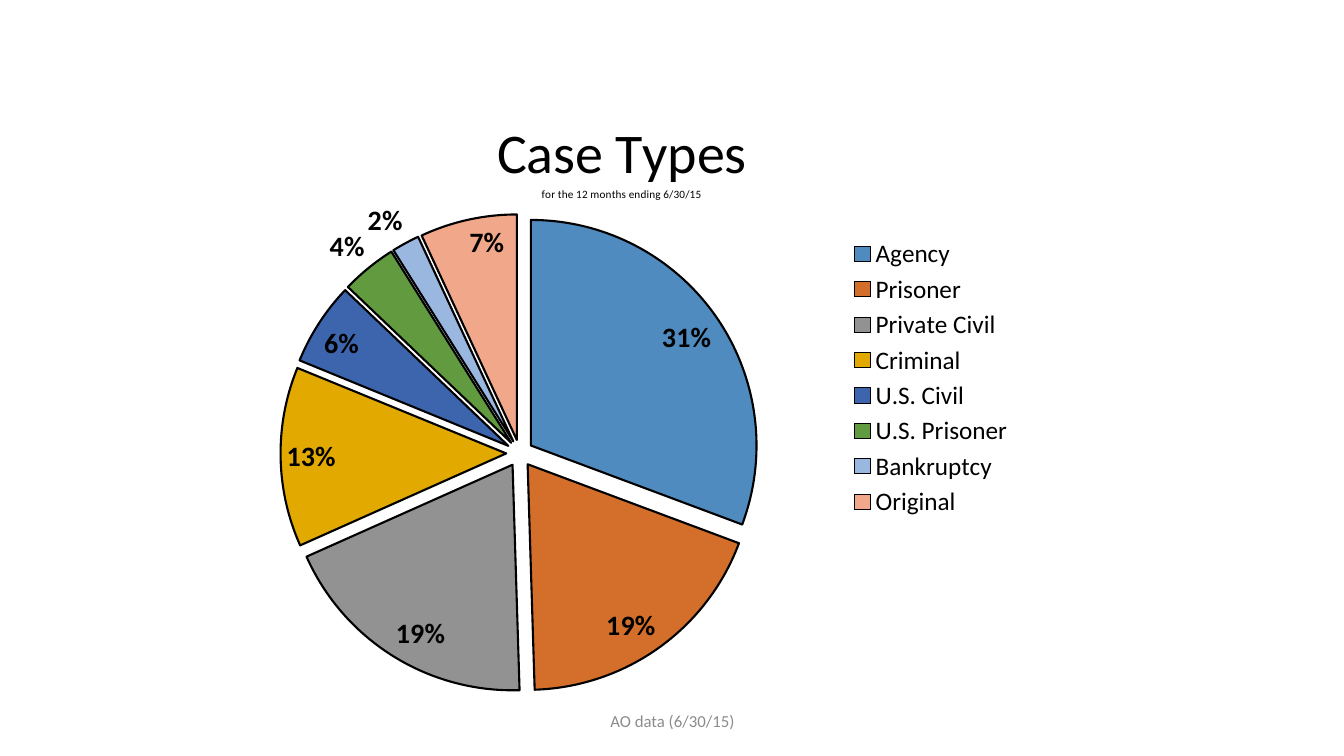
from dataclasses import dataclass

from lxml import etree
from pptx import Presentation
from pptx.chart.data import CategoryChartData
from pptx.dml.color import RGBColor
from pptx.enum.chart import XL_CHART_TYPE, XL_LABEL_POSITION, XL_LEGEND_POSITION
from pptx.enum.text import MSO_ANCHOR, PP_ALIGN
from pptx.oxml.ns import qn
from pptx.util import Inches, Pt

PIE = XL_CHART_TYPE.PIE
INSIDE, OUTSIDE = XL_LABEL_POSITION.INSIDE_END, XL_LABEL_POSITION.OUTSIDE_END
LEGEND_RIGHT = XL_LEGEND_POSITION.RIGHT
CENTER, MIDDLE = PP_ALIGN.CENTER, MSO_ANCHOR.MIDDLE


@dataclass(frozen=True)
class Theme:
    font: str = "Calibri"
    ink: str = "000000"
    muted: str = "8C8C8C"
    title: float = 40
    subtitle: float = 8
    legend: float = 18
    label: float = 20
    footer: float = 12
    outline: float = 1.5
    explosion: int = 6


THEME = Theme()

# Case type, share, slice colour
CASES = [
    ("Agency", 31, "508BBF"),
    ("Prisoner", 19, "D36F2B"),
    ("Private Civil", 19, "929292"),
    ("Criminal", 13, "E2AA00"),
    ("U.S. Civil", 6, "3D65AE"),
    ("U.S. Prisoner", 4, "629A3F"),
    ("Bankruptcy", 2, "9AB7E0"),
    ("Original", 7, "F1A78A"),
]
SMALL_SHARE = 5  # slices below this carry their label outside


def style_font(font, size, color=THEME.ink, bold=False):
    font.name, font.size, font.bold = THEME.font, Pt(size), bold
    font.color.rgb = RGBColor.from_string(color)


def write_text(para, text, **style):
    span = para.add_run()
    span.text = text
    style_font(span.font, **style)


def place_part(part, index, **fractions):
    """Fix a chart part at fractions (x, y, w, h) of the chart box."""
    for old in part.findall(qn("c:layout")):
        part.remove(old)
    layout = etree.Element(qn("c:layout"))
    manual = etree.SubElement(layout, qn("c:manualLayout"))
    if "w" in fractions and index == 0:
        etree.SubElement(manual, qn("c:layoutTarget"), val="inner")
    for axis in "xy":
        etree.SubElement(manual, qn(f"c:{axis}Mode"), val="edge")
    for key, value in fractions.items():
        etree.SubElement(manual, qn(f"c:{key}"), val=str(value))
    part.insert(index, layout)


def style_slices(series):
    series.format.line.width = Pt(THEME.outline)
    explosion = etree.Element(qn("c:explosion"), val=str(THEME.explosion))
    series._element.find(qn("c:spPr")).addnext(explosion)
    for index, (_, _, color) in enumerate(CASES):
        look = series.points[index].format
        look.fill.solid()
        look.fill.fore_color.rgb = RGBColor.from_string(color)
        look.line.color.rgb = RGBColor.from_string(THEME.ink)
        look.line.width = Pt(THEME.outline)


def label_slices(series):
    labels = series.data_labels
    labels.show_percentage, labels.show_value = True, False
    labels.number_format, labels.number_format_is_linked = "0%", False
    labels.position = INSIDE
    style_font(labels.font, THEME.label, bold=True)
    for index, (_, share, _) in enumerate(CASES):
        if share < SMALL_SHARE:
            label = series.points[index].data_label
            style_font(label.font, THEME.label, bold=True)
            label.position = OUTSIDE
    for item in labels._element.findall(qn("c:dLbl")):
        item.find(qn("c:showVal")).set("val", "0")
        item.find(qn("c:showPercent")).set("val", "1")


def add_case_chart(page, left, top, width, height):
    data = CategoryChartData()
    data.categories = [name for name, _, _ in CASES]
    data.add_series("Series 1", [share for _, share, _ in CASES])
    box = [Inches(length) for length in (left, top, width, height)]
    chart = page.shapes.add_chart(PIE, *box, data).chart
    style_font(chart.font, THEME.legend)

    # Title and subtitle
    frame = chart.chart_title.text_frame
    write_text(frame.paragraphs[0], "Case Types", size=THEME.title)
    write_text(frame.add_paragraph(), "for the 12 months ending 6/30/15",
               size=THEME.subtitle)
    place_part(chart.chart_title._element, 1, x=0.38, y=0.1)

    # Slices and labels
    plot = chart.plots[0]
    plot.vary_by_categories = True
    style_slices(plot.series[0])
    label_slices(plot.series[0])
    place_part(chart._chartSpace.chart.plotArea, 0, x=0.13, y=0.25, w=0.56, h=0.73)

    # Legend
    chart.has_legend = True
    chart.legend.position = LEGEND_RIGHT
    chart.legend.include_in_layout = False
    style_font(chart.legend.font, THEME.legend)
    place_part(chart.legend._element, 1, x=0.79, y=0.28, w=0.2, h=0.44)


def add_footer(page, left, top, width, height):
    box = page.shapes.add_textbox(*[Inches(v) for v in (left, top, width, height)])
    frame = box.text_frame
    frame.word_wrap, frame.vertical_anchor = True, MIDDLE
    para = frame.paragraphs[0]
    para.alignment = CENTER
    write_text(para, "AO data (6/30/15)", size=THEME.footer, color=THEME.muted)


def main():
    deck = Presentation()
    deck.slide_width, deck.slide_height = Inches(13.33), Inches(7.5)
    page = deck.slides.add_slide(deck.slide_layouts[6])
    add_case_chart(page, 1.67, 0.5, 8.5, 6.5)
    add_footer(page, 4.42, 6.95, 4.5, 0.4)
    deck.save("out.pptx")


if __name__ == "__main__":
    main()
